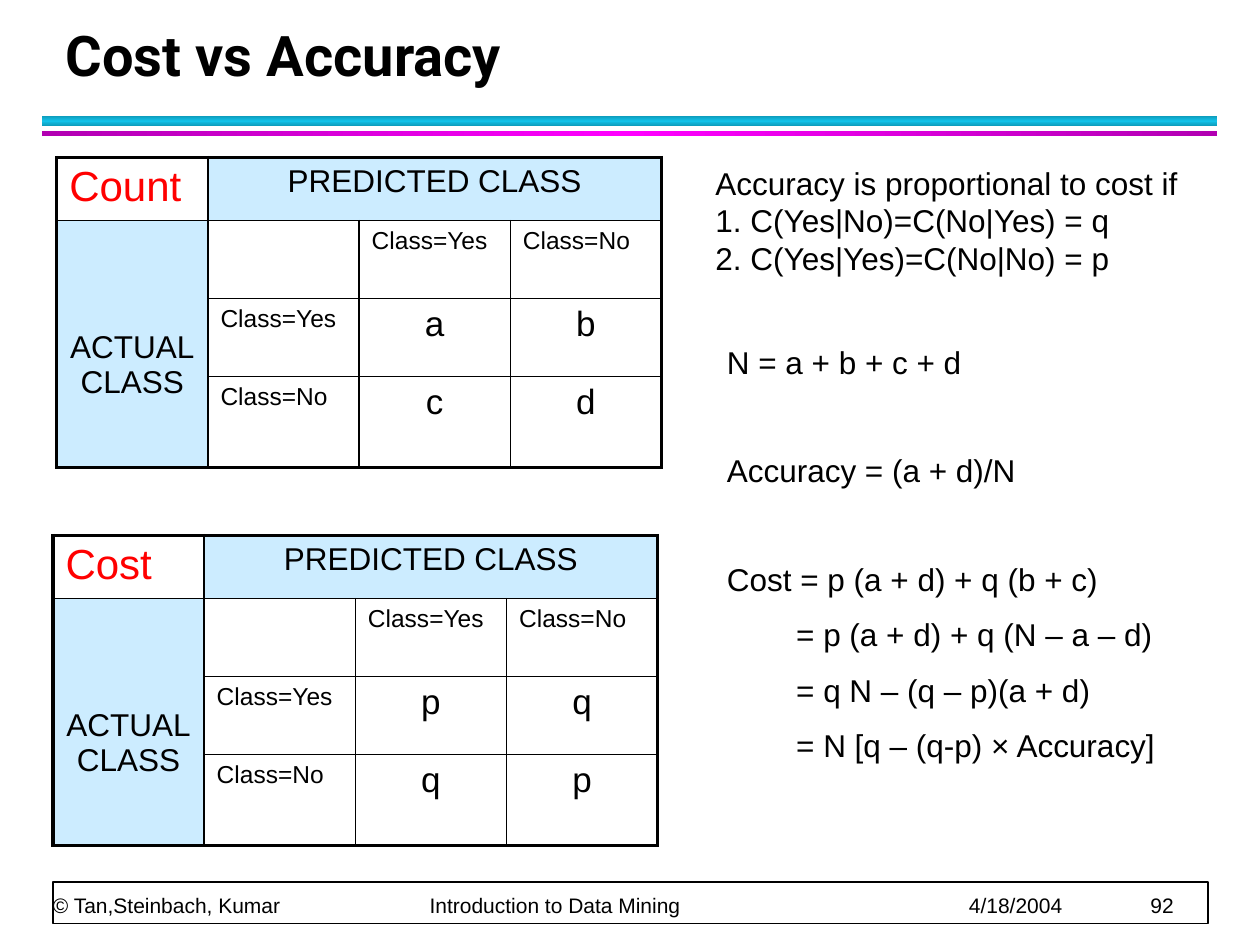
import copy
import dataclasses
import typing

import pptx
import pptx.dml.color
import pptx.enum.shapes
import pptx.enum.text
import pptx.oxml.ns
import pptx.oxml.xmlchemy
import pptx.util
from lxml import etree

Inches = pptx.util.Inches
Pt = pptx.util.Pt
Align = pptx.enum.text.PP_ALIGN
Anchor = pptx.enum.text.MSO_ANCHOR
qn = pptx.oxml.ns.qn


@dataclasses.dataclass(frozen=True)
class Theme:
    font: str = "Arial"
    title_font: str = "Roboto"
    black: str = "000000"
    white: str = "FFFFFF"
    red: str = "FF0000"
    pale_blue: str = "CCECFF"
    cyan: tuple[str, str] = ("0E9BBA", "12C2E9")
    magenta: tuple[str, str] = ("B200B2", "FF00FF")
    title_size: int = 32
    corner_size: int = 24
    value_size: int = 20
    body_size: int = 18
    label_size: int = 14
    footer_size: int = 12
    outer_line: float = 2.25
    inner_line: float = 1


THEME = Theme()


@dataclasses.dataclass(frozen=True)
class Bar:
    top: float
    height: float
    colors: tuple[str, str]
    angle: int


@dataclasses.dataclass(frozen=True)
class Matrix:
    name: str
    left: float
    top: float
    values: tuple[str, str, str, str]


@dataclasses.dataclass(frozen=True)
class Formula:
    text: str
    space_before: float = 10
    indent: float = 0


BARS = (Bar(0.92, 0.08, THEME.cyan, 90), Bar(1.04, 0.04, THEME.magenta, 0))
MATRICES = (
    Matrix("Count", 0.45, 1.25, ("a", "b", "c", "d")),
    Matrix("Cost", 0.42, 4.25, ("p", "q", "q", "p")),
)
ROW_HEIGHTS = (0.49, 0.62, 0.62, 0.72)
COLUMN_WIDTH = 1.2
CLASSES = ("Class=Yes", "Class=No")
CONDITIONS = (
    "Accuracy is proportional to cost if",
    "1. C(Yes|No)=C(No|Yes) = q",
    "2. C(Yes|Yes)=C(No|No) = p",
)
FORMULAS = (
    Formula("N = a + b + c + d", 0),
    Formula("Accuracy = (a + d)/N", 40.5),
    Formula("Cost = p (a + d) + q (b + c)", 40.5),
    Formula("= p (a + d) + q (N – a – d)", indent=0.55),
    Formula("= q N – (q – p)(a + d)", indent=0.55),
    Formula("= N [q – (q-p) × Accuracy]", indent=0.55),
)
FOOTER = ("© Tan,Steinbach, Kumar", "Introduction to Data Mining", "4/18/2004", "92")
FOOTER_TABS = (2.99, 7.27, 8.71)


def rgb(color: str) -> pptx.dml.color.RGBColor:
    return pptx.dml.color.RGBColor.from_string(color)


def write(paragraph: typing.Any, text: str, size: float, color: str = THEME.black,
          font: str = THEME.font, bold: bool = False) -> None:
    paragraph.text = text
    paragraph.font.name = font
    paragraph.font.size = Pt(size)
    paragraph.font.bold = bold
    paragraph.font.color.rgb = rgb(color)


def add_bar(slide: typing.Any, bar: Bar) -> None:
    shape = slide.shapes.add_shape(
        pptx.enum.shapes.MSO_SHAPE.RECTANGLE,
        Inches(0.33), Inches(bar.top), Inches(9.33), Inches(bar.height))
    shape.shadow.inherit = False
    shape.line.fill.background()
    shape.fill.gradient()
    shape.fill.gradient_angle = bar.angle
    stop_list = shape._element.spPr.find(".//" + qn("a:gsLst"))
    stop_list.append(copy.deepcopy(stop_list[-1]))
    edge, middle = bar.colors
    for stop, position, color in zip(shape.fill.gradient_stops, (0, 0.5, 1), (edge, middle, edge)):
        stop.position = position
        stop.color.rgb = rgb(color)


def set_border(cell: typing.Any, side: str, width: float) -> None:
    line = etree.SubElement(cell._tc.get_or_add_tcPr(), qn(f"a:ln{side}"), w=str(Pt(width)))
    fill = etree.SubElement(line, qn("a:solidFill"))
    etree.SubElement(fill, qn("a:srgbClr"), val=THEME.black)


def draw_borders(cell: typing.Any, row: int, column: int) -> None:
    outer = {
        "L": column == 0,
        "R": column + cell.span_width == 4,
        "T": row == 0,
        "B": row + cell.span_height == 4,
    }
    for side, is_outer in outer.items():
        if is_outer or not cell.is_spanned:
            set_border(cell, side, THEME.outer_line if is_outer else THEME.inner_line)


def fill_cell(cell: typing.Any, text: str, size: float, color: str = THEME.black,
              align: Align = Align.CENTER) -> None:
    paragraph = cell.text_frame.paragraphs[0]
    write(paragraph, text, size, color)
    paragraph.alignment = align
    paragraph.space_before = Pt(size / 10)
    paragraph.space_after = Pt(4)


def add_matrix(slide: typing.Any, matrix: Matrix) -> None:
    table = slide.shapes.add_table(
        4, 4, Inches(matrix.left), Inches(matrix.top),
        Inches(4 * COLUMN_WIDTH), Inches(sum(ROW_HEIGHTS))).table
    table.first_row = False
    table.horz_banding = False
    for column in table.columns:
        column.width = Inches(COLUMN_WIDTH)
    for row, height in zip(table.rows, ROW_HEIGHTS):
        row.height = Inches(height)
    predicted, actual = table.cell(0, 1), table.cell(1, 0)
    predicted.merge(table.cell(0, 3))
    actual.merge(table.cell(3, 0))
    for row in range(4):
        for column in range(4):
            cell = table.cell(row, column)
            draw_borders(cell, row, column)
            cell.fill.solid()
            is_heading = (row == 0) != (column == 0)
            cell.fill.fore_color.rgb = rgb(THEME.pale_blue if is_heading else THEME.white)

    fill_cell(table.cell(0, 0), matrix.name, THEME.corner_size, THEME.red, Align.LEFT)
    fill_cell(predicted, "PREDICTED CLASS", THEME.body_size)
    fill_cell(actual, "ACTUAL\vCLASS", THEME.body_size)
    actual.margin_top = Inches(0.87)
    for index, label in enumerate(CLASSES, start=2):
        fill_cell(table.cell(1, index), label, THEME.label_size, align=Align.LEFT)
        fill_cell(table.cell(index, 1), label, THEME.label_size, align=Align.LEFT)
    for index, value in enumerate(matrix.values):
        fill_cell(table.cell(2 + index // 2, 2 + index % 2), value, THEME.value_size)


def add_text_frame(slide: typing.Any, left: float, top: float, width: float, height: float) -> typing.Any:
    text_box = slide.shapes.add_textbox(Inches(left), Inches(top), Inches(width), Inches(height))
    text_box.text_frame.word_wrap = True
    return text_box.text_frame


def add_formulas(slide: typing.Any) -> None:
    frame = add_text_frame(slide, 5.67, 2.67, 3.92, 4.01)
    for index, formula in enumerate(FORMULAS):
        paragraph = frame.add_paragraph() if index else frame.paragraphs[0]
        write(paragraph, formula.text, THEME.body_size)
        paragraph.space_before = Pt(formula.space_before)
        properties = paragraph._p.get_or_add_pPr()
        properties.set("marL", str(Inches(formula.indent)))
        properties.set("indent", "0")


def add_footer(slide: typing.Any) -> None:
    frame_box = slide.shapes.add_shape(
        pptx.enum.shapes.MSO_SHAPE.RECTANGLE, Inches(0.42), Inches(7), Inches(9.17), Inches(0.33))
    frame_box.shadow.inherit = False
    frame_box.fill.solid()
    frame_box.fill.fore_color.rgb = rgb(THEME.white)
    frame_box.line.color.rgb = rgb(THEME.black)
    frame_box.line.width = Pt(1)
    frame = add_text_frame(slide, 0.42, 7, 9.15, 0.28)
    frame.margin_left = frame.margin_top = frame.margin_right = frame.margin_bottom = 0
    frame.vertical_anchor = Anchor.BOTTOM
    paragraph = frame.paragraphs[0]
    write(paragraph, "\t".join(FOOTER), THEME.footer_size)
    paragraph.line_spacing = Pt(20)
    tab_list = etree.Element(qn("a:tabLst"))
    for position in FOOTER_TABS:
        etree.SubElement(tab_list, qn("a:tab"), pos=str(Inches(position)), algn="l")
    paragraph._p.pPr.find(qn("a:defRPr")).addprevious(tab_list)


def add_title(slide: typing.Any) -> None:
    title = slide.shapes.title
    title.left, title.top, title.width, title.height = map(Inches, (0.42, 0.17, 9.06, 0.58))
    title.text_frame.vertical_anchor = Anchor.BOTTOM
    paragraph = title.text_frame.paragraphs[0]
    write(paragraph, "Cost vs Accuracy", THEME.title_size, font=THEME.title_font, bold=True)
    paragraph.alignment = Align.LEFT
    paragraph.line_spacing = Pt(36)


def main() -> None:
    presentation = pptx.Presentation()
    presentation.slide_width, presentation.slide_height = Inches(10), Inches(7.5)
    slide = presentation.slides.add_slide(presentation.slide_layouts[5])
    for bar in BARS:
        add_bar(slide, bar)
    add_footer(slide)
    add_title(slide)
    for matrix in MATRICES:
        add_matrix(slide, matrix)
    add_formulas(slide)
    conditions = add_text_frame(slide, 5.58, 1.25, 4.08, 1)
    write(conditions.paragraphs[0], "\v".join(CONDITIONS), THEME.body_size)
    presentation.save("out.pptx")


if __name__ == "__main__":
    main()
